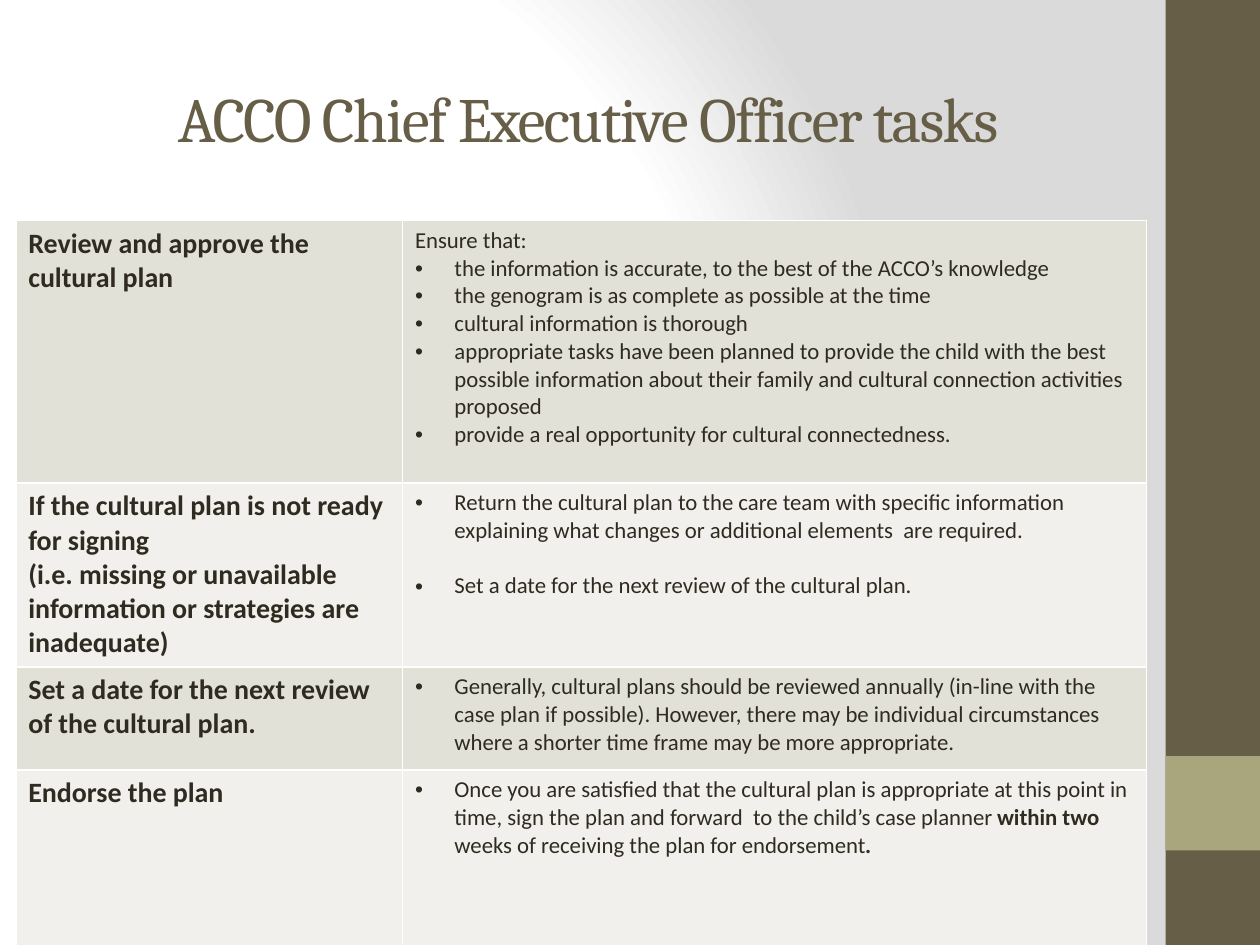
from lxml.etree import SubElement
from pptx import Presentation
from pptx.dml.color import RGBColor
from pptx.enum.shapes import MSO_SHAPE
from pptx.enum.text import MSO_ANCHOR, MSO_AUTO_SIZE, PP_ALIGN
from pptx.oxml.ns import qn
from pptx.util import Pt

COLORS = {
    "olive": "675E47", "sage": "A9A57C", "ink": "2F2B20", "white": "FFFFFF",
    "grey": "DADADA", "band_dark": "E2E1D7", "band_light": "F1F0EC",
}
COLUMN_WIDTHS = [221, 425]
BULLET_INDENT = 22.5
LINE_GAP = 15.8

# Each row: height, task paragraphs, lead-in, bullets (lists of (text, bold)), gap between bullets
ROWS = [
    (150, ["Review and approve the cultural plan"], "Ensure that:", [
        [("the information is accurate, to the best of the ACCO’s knowledge", False)],
        [("the genogram is as complete as possible at the time", False)],
        [("cultural information is thorough", False)],
        [("appropriate tasks have been planned to provide the child with the best possible "
          "information about their family and cultural connection activities proposed", False)],
        [("provide a real opportunity for cultural connectedness.", False)],
    ], 0),
    (105, ["If the cultural plan is not ready for signing",
           "(i.e. missing or unavailable information or strategies are inadequate)"], None, [
        [("Return the cultural plan to the care team with specific information explaining "
          "what changes or additional elements  are required.", False)],
        [("Set a date for the next review of the cultural plan.", False)],
    ], LINE_GAP),
    (59, ["Set a date for the next review of the cultural plan."], None, [
        [("Generally, cultural plans should be reviewed annually (in-line with the case plan "
          "if possible). However, there may be individual circumstances where a shorter time "
          "frame may be more appropriate.", False)],
    ], 0),
    (109, ["Endorse the plan"], None, [
        [("Once you are satisfied that the cultural plan is appropriate at this point in time, "
          "sign the plan and forward  to the child’s case planner ", False),
         ("within two ", True),
         ("weeks of receiving the plan for endorsement", False),
         (".", True)],
    ], 0),
]


def rgb(name):
    return RGBColor.from_string(COLORS[name])


def format_font(font, size, color, face="Calibri", bold=False):
    font.size, font.name, font.bold = Pt(size), face, bold
    font.color.rgb = rgb(color)


def set_background(slide):
    slide.background.fill.gradient()
    gradient = slide.element.find(".//" + qn("a:gradFill"))
    for child in list(gradient):
        gradient.remove(child)
    stops = SubElement(gradient, qn("a:gsLst"))
    for percent, color in [(0, "white"), (75, "white"), (100, "grey")]:
        stop = SubElement(stops, qn("a:gs"), pos=str(percent * 1000))
        SubElement(stop, qn("a:srgbClr"), val=COLORS[color])
    circle = SubElement(gradient, qn("a:path"), path="circle")
    SubElement(circle, qn("a:fillToRect"), l="20000", t="50000", r="100000", b="50000")


def add_side_block(slide, top, height, color):
    block = slide.shapes.add_shape(MSO_SHAPE.RECTANGLE, Pt(666), Pt(top), Pt(54), Pt(height))
    block.shadow.inherit = False
    block.fill.solid()
    block.fill.fore_color.rgb = rgb(color)
    block.line.fill.background()


def set_title(slide, wording):
    title = slide.shapes.title
    title.left, title.top, title.width, title.height = Pt(36), Pt(22), Pt(600), Pt(90)
    frame = title.text_frame
    frame.text = wording
    frame.word_wrap = True
    frame.auto_size = MSO_AUTO_SIZE.NONE
    frame.vertical_anchor = MSO_ANCHOR.MIDDLE
    heading = frame.paragraphs[0]
    heading.alignment = PP_ALIGN.CENTER
    format_font(heading.runs[0].font, 36, "olive", "Cambria")
    heading.runs[0].font._element.set("spc", "-100")


def style_cell(cell, color):
    properties = cell._tc.get_or_add_tcPr()
    for side in ("a:lnL", "a:lnR", "a:lnT", "a:lnB"):
        border = SubElement(properties, qn(side), w=str(Pt(1)))
        SubElement(SubElement(border, qn("a:solidFill")), qn("a:srgbClr"), val=COLORS["white"])
    cell.fill.solid()
    cell.fill.fore_color.rgb = rgb(color)


def write_tasks(cell, tasks):
    cell.text_frame.text = "\n".join(tasks)
    for paragraph in cell.text_frame.paragraphs:
        format_font(paragraph.runs[0].font, 16, "ink", bold=True)


def add_bullet(paragraph):
    properties = paragraph._p.get_or_add_pPr()
    properties.set("marL", str(Pt(BULLET_INDENT)))
    properties.set("indent", str(-Pt(BULLET_INDENT)))
    SubElement(properties, qn("a:buFont"), typeface="Arial")
    SubElement(properties, qn("a:buChar"), char="•")


def write_actions(cell, lead_in, bullets, gap):
    frame = cell.text_frame
    lines = ([[(lead_in, False)]] if lead_in else []) + bullets
    for index, line in enumerate(lines):
        paragraph = frame.add_paragraph() if index else frame.paragraphs[0]
        if index and gap:
            paragraph.space_before = Pt(gap)
        if index or not lead_in:
            add_bullet(paragraph)
        for wording, bold in line:
            run = paragraph.add_run()
            run.text = wording
            format_font(run.font, 13, "ink", bold=bold)


def add_task_table(slide):
    table = slide.shapes.add_table(
        len(ROWS), len(COLUMN_WIDTHS), Pt(9), Pt(126),
        Pt(sum(COLUMN_WIDTHS)), Pt(sum(row[0] for row in ROWS))).table
    table.first_row = table.horz_banding = False
    for column, width in zip(table.columns, COLUMN_WIDTHS):
        column.width = Pt(width)
    for index, (height, tasks, lead_in, bullets, gap) in enumerate(ROWS):
        table.rows[index].height = Pt(height)
        task_cell, action_cell = table.rows[index].cells
        write_tasks(task_cell, tasks)
        write_actions(action_cell, lead_in, bullets, gap)
        for cell in (task_cell, action_cell):
            style_cell(cell, "band_light" if index % 2 else "band_dark")


def main():
    presentation = Presentation()
    presentation.slide_width, presentation.slide_height = Pt(720), Pt(540)
    slide = presentation.slides.add_slide(presentation.slide_layouts[5])

    # Backdrop and side band
    set_background(slide)
    add_side_block(slide, 0, 540, "olive")
    add_side_block(slide, 432, 54, "sage")

    # Title and task table
    set_title(slide, "ACCO Chief Executive Officer tasks")
    add_task_table(slide)
    presentation.save("out.pptx")


if __name__ == "__main__":
    main()
